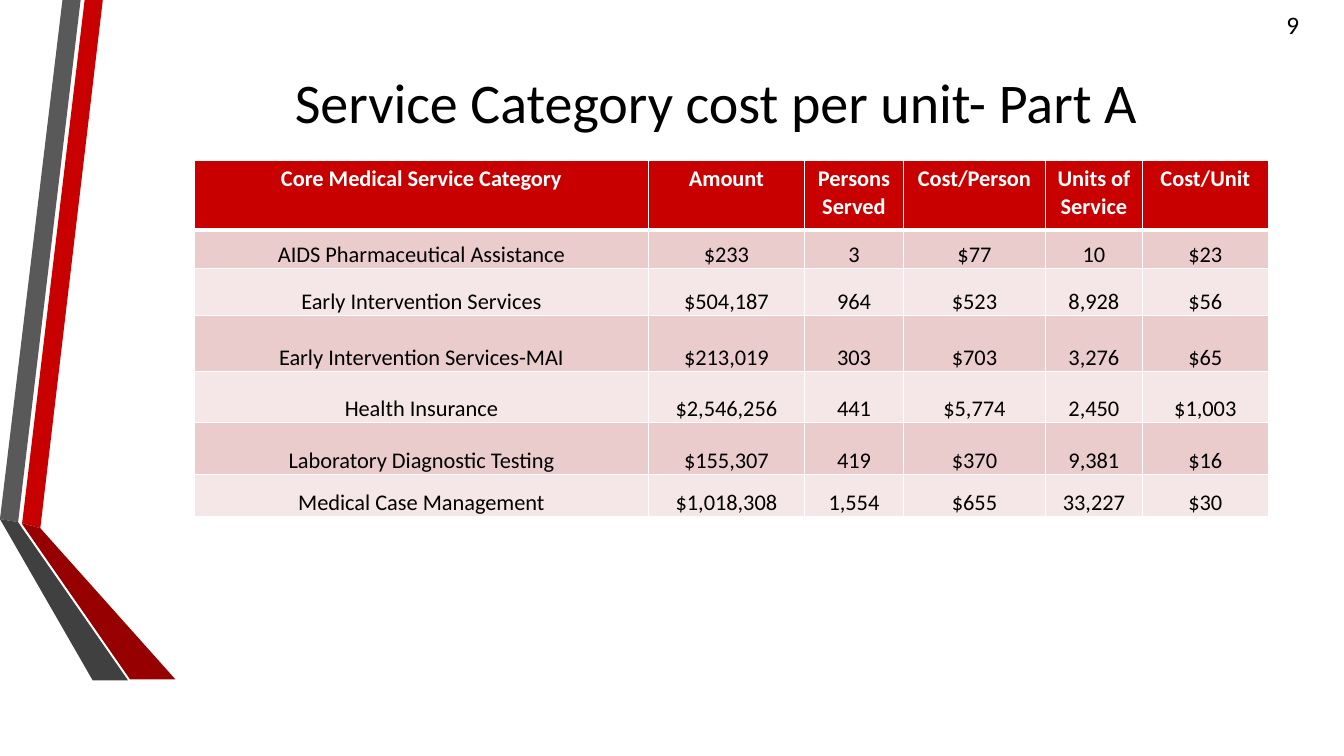
from dataclasses import dataclass
from typing import Any

import lxml.etree
import pptx
import pptx.dml.color
import pptx.enum.text
import pptx.oxml.ns
import pptx.util

EMU_PER_PX = 9144  # 100 px to the inch
FONT = "Calibri"
ANCHOR = pptx.enum.text.MSO_ANCHOR
ALIGN = pptx.enum.text.PP_ALIGN


@dataclass
class Ribbon:
    color: str
    points: list[tuple[int, int]]


@dataclass
class Column:
    heading: str
    width: int


@dataclass
class Service:
    height: int
    values: tuple[str, ...]


RIBBONS = [
    Ribbon("C80000", [(22, 519), (40, 524), (102, 0), (84, 0)]),
    Ribbon("595959", [(80, 0), (62, 0), (0, 515), (18, 518)]),
    Ribbon("960000", [(22, 520), (129, 674), (174, 674), (40, 524), (22, 519)]),
    Ribbon("404040", [(127, 675), (22, 524), (18, 518), (0, 515), (92, 675)]),
]
COLUMNS = [
    Column("Core Medical Service Category", 450),
    Column("Amount", 155),
    Column("Persons Served", 98),
    Column("Cost/Person", 141),
    Column("Units of Service", 96),
    Column("Cost/Unit", 125),
]
HEADER_HEIGHT = 69
SERVICES = [
    Service(38, ("AIDS Pharmaceutical Assistance", "$233", "3", "$77", "10", "$23")),
    Service(47, ("Early Intervention Services", "$504,187", "964", "$523", "8,928", "$56")),
    Service(56, ("Early Intervention Services-MAI", "$213,019", "303", "$703", "3,276", "$65")),
    Service(50, ("Health Insurance", "$2,546,256", "441", "$5,774", "2,450", "$1,003")),
    Service(52, ("Laboratory Diagnostic Testing", "$155,307", "419", "$370", "9,381", "$16")),
    Service(42, ("Medical Case Management", "$1,018,308", "1,554", "$655", "33,227", "$30")),
]
BAND_COLORS = ("EBCCCC", "F5E7E7")
NO_MARGINS = dict.fromkeys(("margin_left", "margin_top", "margin_right", "margin_bottom"), 0)
HEADER_BORDERS = {"lnL": 1, "lnR": 1, "lnT": 1, "lnB": 3}


def px(length: int) -> pptx.util.Emu:
    return pptx.util.Emu(length * EMU_PER_PX)


def rgb(color: str) -> pptx.dml.color.RGBColor:
    return pptx.dml.color.RGBColor.from_string(color)


def apply(target: Any, formats: dict[str, Any]) -> None:
    for attribute, value in formats.items():
        setattr(target, attribute, value)


def fill(target: Any, color: str) -> None:
    target.fill.solid()
    target.fill.fore_color.rgb = rgb(color)


def write(frame: Any, text: str, size: int, align: Any, color: str = "000000", bold: bool = False) -> None:
    frame.text = text
    paragraph = frame.paragraphs[0]
    paragraph.alignment = align
    font = paragraph.runs[0].font
    apply(font, {"name": FONT, "size": pptx.util.Pt(size), "bold": bold})
    font.color.rgb = rgb(color)


def draw_ribbon(slide: Any, ribbon: Ribbon) -> None:
    builder = slide.shapes.build_freeform(*ribbon.points[0], scale=EMU_PER_PX)
    builder.add_line_segments(ribbon.points[1:], close=True)
    band = builder.convert_to_shape()
    band.shadow.inherit = False
    fill(band, ribbon.color)
    band.line.fill.background()


def draw_header_borders(cell: Any) -> None:
    properties = cell._tc.get_or_add_tcPr()
    qn = pptx.oxml.ns.qn
    for side, points in HEADER_BORDERS.items():
        border = lxml.etree.SubElement(properties, qn(f"a:{side}"), w=str(pptx.util.Pt(points)))
        solid = lxml.etree.SubElement(border, qn("a:solidFill"))
        lxml.etree.SubElement(solid, qn("a:srgbClr"), val="FFFFFF")


def draw_cost_table(slide: Any, left: int, top: int) -> None:
    heights = [HEADER_HEIGHT] + [service.height for service in SERVICES]
    widths = [column.width for column in COLUMNS]
    costs = slide.shapes.add_table(
        len(heights), len(widths), px(left), px(top), px(sum(widths)), px(sum(heights))
    ).table
    for row, height in zip(costs.rows, heights):
        row.height = px(height)
    for index, column in enumerate(COLUMNS):
        costs.columns[index].width = px(column.width)
        heading = costs.cell(0, index)
        write(heading.text_frame, column.heading, 16, ALIGN.CENTER, "FFFFFF", True)
        draw_header_borders(heading)
        fill(heading, "C80000")
    for number, service in enumerate(SERVICES):
        for index, value in enumerate(service.values):
            cell = costs.cell(number + 1, index)
            write(cell.text_frame, value, 16, ALIGN.CENTER)
            apply(cell, {"vertical_anchor": ANCHOR.BOTTOM, **NO_MARGINS})
            fill(cell, BAND_COLORS[number % 2])


def main() -> None:
    presentation = pptx.Presentation()
    apply(presentation, {"slide_width": px(1333), "slide_height": px(750)})
    slide = presentation.slides.add_slide(presentation.slide_layouts[5])

    # Ribbon on the left edge
    for ribbon in RIBBONS:
        draw_ribbon(slide, ribbon)

    # Page number
    page_number = slide.shapes.add_textbox(px(1266), px(4), px(67), px(40)).text_frame
    page_number.word_wrap = True
    write(page_number, "9", 18, ALIGN.LEFT)

    # Title
    title = slide.shapes.title
    apply(title, {"left": px(162), "top": px(4), "width": px(1096), "height": px(192)})
    write(title.text_frame, "Service Category cost per unit- Part A", 40, ALIGN.CENTER)
    title.text_frame.vertical_anchor = ANCHOR.MIDDLE

    # Cost table
    draw_cost_table(slide, 193, 159)

    presentation.save("out.pptx")


if __name__ == "__main__":
    main()
